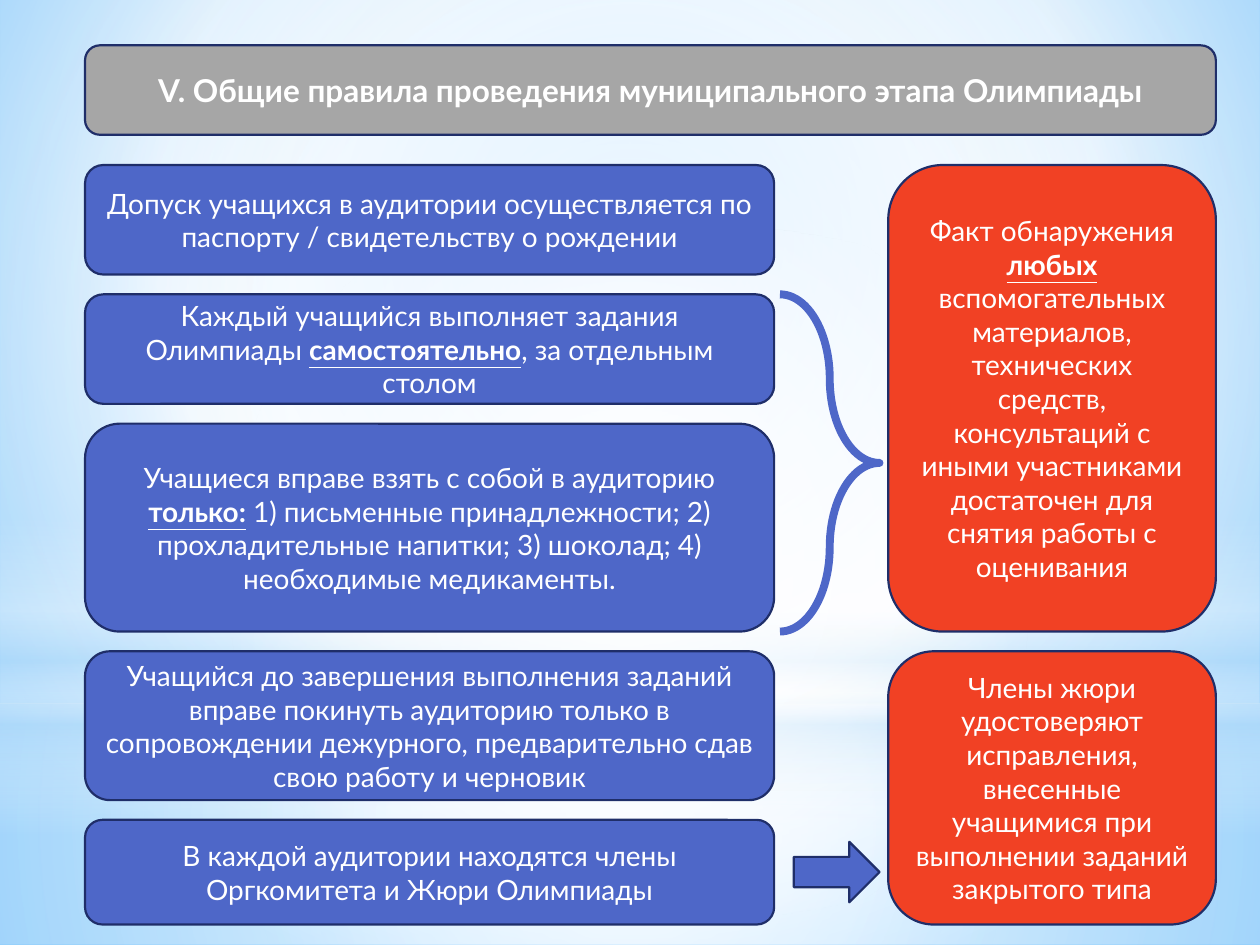
from dataclasses import dataclass

from lxml.etree import SubElement
from pptx import Presentation
from pptx.dml.color import RGBColor
from pptx.enum.shapes import MSO_SHAPE as Preset
from pptx.enum.text import MSO_ANCHOR as Anchor, PP_ALIGN as Align
from pptx.oxml.ns import qn
from pptx.util import Pt


@dataclass(frozen=True)
class Theme:
    font: str = "Lato"
    title_size: float = 18
    body_size: float = 16
    line_width: float = 1.25
    brace_width: float = 4.5
    text: str = "FFFFFF"
    outline: str = "1F2E69"
    heading: str = "A6A6A6"
    rule: str = "4E67C8"
    warning: str = "F14124"
    sky: str = "B4DCFA"
    sky_light: str = "9ED5FF"
    sky_deep: str = "5BB9FF"
    white: str = "FFFFFF"


class SlideBuilder:
    def __init__(self, presentation, theme):
        self.theme = theme
        self.slide = presentation.slides.add_slide(presentation.slide_layouts[5])

    def add_gradient(self, fill, parent, stops, focus=None):
        fill.solid()
        solid = parent.find(qn("a:solidFill"))
        gradient = parent.makeelement(qn("a:gradFill"), {"rotWithShape": "1"})
        stop_list = SubElement(gradient, qn("a:gsLst"))
        for position, color, opacity in stops:
            stop = SubElement(stop_list, qn("a:gs"), {"pos": str(position * 1000)})
            swatch = SubElement(stop, qn("a:srgbClr"), {"val": color})
            if opacity < 100:
                SubElement(swatch, qn("a:alpha"), {"val": str(opacity * 1000)})
        if focus:
            route = SubElement(gradient, qn("a:path"), {"path": "circle"})
            edges = {side: str(value * 1000) for side, value in zip("ltrb", focus)}
            SubElement(route, qn("a:fillToRect"), edges)
        else:
            SubElement(gradient, qn("a:lin"), {"ang": "5400000", "scaled": "0"})
        parent.replace(solid, gradient)

    def add_background(self, stops, focus):
        fill = self.slide.background.fill
        fill.solid()
        properties = self.slide.element.find(".//" + qn("p:bgPr"))
        self.add_gradient(fill, properties, stops, focus)

    def add_shape(self, preset, box, fill=None, line=None, width=None):
        shape = self.slide.shapes.add_shape(preset, *map(Pt, box))
        shape.shadow.inherit = False
        if fill:
            shape.fill.solid()
            shape.fill.fore_color.rgb = RGBColor.from_string(fill)
        else:
            shape.fill.background()
        if line:
            shape.line.color.rgb = RGBColor.from_string(line)
            shape.line.width = Pt(width or self.theme.line_width)
        else:
            shape.line.fill.background()
        return shape

    def add_glow(self, preset, box, stops, focus=None):
        shape = self.add_shape(preset, box)
        self.add_gradient(shape.fill, shape.element.spPr, stops, focus)

    def set_text(self, shape, text, size, bold=None):
        frame = shape.text_frame
        frame.word_wrap = True
        frame.vertical_anchor = Anchor.MIDDLE
        paragraph = frame.paragraphs[0]
        paragraph.alignment = Align.CENTER
        paragraph.font.name = self.theme.font
        paragraph.font.size = Pt(size)
        paragraph.font.bold = bold
        paragraph.font.color.rgb = RGBColor.from_string(self.theme.text)
        for index, part in enumerate(text.split("*")):
            run = paragraph.add_run()
            run.text = part
            if index % 2:
                run.font.bold = True
                run.font.underline = True

    def add_title(self, box, text):
        self.add_shape(Preset.ROUNDED_RECTANGLE, box, self.theme.heading, self.theme.outline)
        title = self.slide.shapes.title
        title.left, title.top, title.width, title.height = map(Pt, box)
        self.set_text(title, text, self.theme.title_size, bold=True)
        self.slide.shapes.element.append(title.element)

    def add_card(self, box, text, fill):
        card = self.add_shape(Preset.ROUNDED_RECTANGLE, box, fill, self.theme.outline)
        self.set_text(card, text, self.theme.body_size)

    def add_brace(self, box):
        brace = self.add_shape(Preset.RIGHT_BRACE, box, line=self.theme.rule,
                               width=self.theme.brace_width)
        brace.adjustments[0] = 1.51
        brace.adjustments[1] = 0.5

    def add_arrow(self, box):
        self.add_shape(Preset.RIGHT_ARROW, box, self.theme.rule, self.theme.outline)


RULES = [
    (62.6, "Допуск учащихся в аудитории осуществляется по паспорту / свидетельству о рождении"),
    (62.6, "Каждый учащийся выполняет задания Олимпиады *самостоятельно*, за отдельным столом"),
    (118.8, "Учащиеся вправе взять с собой в аудиторию *только:* 1) письменные принадлежности; "
            "2) прохладительные напитки; 3) шоколад; 4) необходимые медикаменты."),
    (85, "Учащийся до завершения выполнения заданий вправе покинуть аудиторию только в "
         "сопровождении дежурного, предварительно сдав свою работу и черновик"),
    (59.8, "В каждой аудитории находятся члены Оргкомитета и Жюри Олимпиады"),
]
VIOLATION = ("Факт обнаружения *любых* вспомогательных материалов, технических средств, "
             "консультаций с иными участниками достаточен для снятия работы с оценивания")
JURY = ("Члены жюри удостоверяют исправления, внесенные учащимися при выполнении "
        "заданий закрытого типа")
LEFT, TOP, GAP, RULE_WIDTH = 48.6, 94.3, 11.3, 393.8
RIGHT, RIGHT_WIDTH = 507.6, 187.2
CENTER = (50, 50, 50, 50)


def add_backdrop(builder):
    theme = builder.theme
    white, sky = theme.white, theme.sky
    builder.add_background(
        [(0, theme.sky_light, 100), (60, white, 100), (100, theme.sky_deep, 100)],
        (20, 10, 20, 60))
    builder.add_glow(Preset.RECTANGLE, (0, 401.8, 720, 138.2),
                     [(0, white, 91), (37, white, 76), (100, sky, 79)], CENTER)
    builder.add_glow(Preset.RECTANGLE, (0, 0, 720, 401.8),
                     [(0, white, 89), (48, white, 62), (100, sky, 79)], CENTER)
    builder.add_glow(Preset.RECTANGLE, (0, 296.6, 720, 180),
                     [(0, white, 0), (29, white, 30), (45, sky, 40),
                      (55, white, 26), (65, sky, 60), (100, white, 0)])
    builder.add_glow(Preset.OVAL, (0, 126, 720, 401.8),
                     [(0, white, 100), (56, white, 0)], CENTER)


def main():
    presentation = Presentation()
    presentation.slide_width, presentation.slide_height = Pt(720), Pt(540)
    theme = Theme()
    builder = SlideBuilder(presentation, theme)
    add_backdrop(builder)
    builder.add_title((LEFT, 25.9, RIGHT + RIGHT_WIDTH - LEFT, 51.1),
                      "V. Общие правила проведения муниципального этапа Олимпиады")

    tops = []
    top = TOP
    for height, text in RULES:
        builder.add_card((LEFT, top, RULE_WIDTH, height), text, theme.rule)
        tops.append(top)
        top += height + GAP

    upper_bottom, lower_bottom = tops[3] - GAP, top - GAP
    builder.add_card((RIGHT, TOP, RIGHT_WIDTH, upper_bottom - TOP), VIOLATION, theme.warning)
    builder.add_card((RIGHT, tops[3], RIGHT_WIDTH, lower_bottom - tops[3]), JURY, theme.warning)
    builder.add_brace((445.7, tops[1], 56.9, upper_bottom - tops[1]))
    builder.add_arrow((453.6, 481, 49, 34.6))
    presentation.save("out.pptx")


if __name__ == "__main__":
    main()
